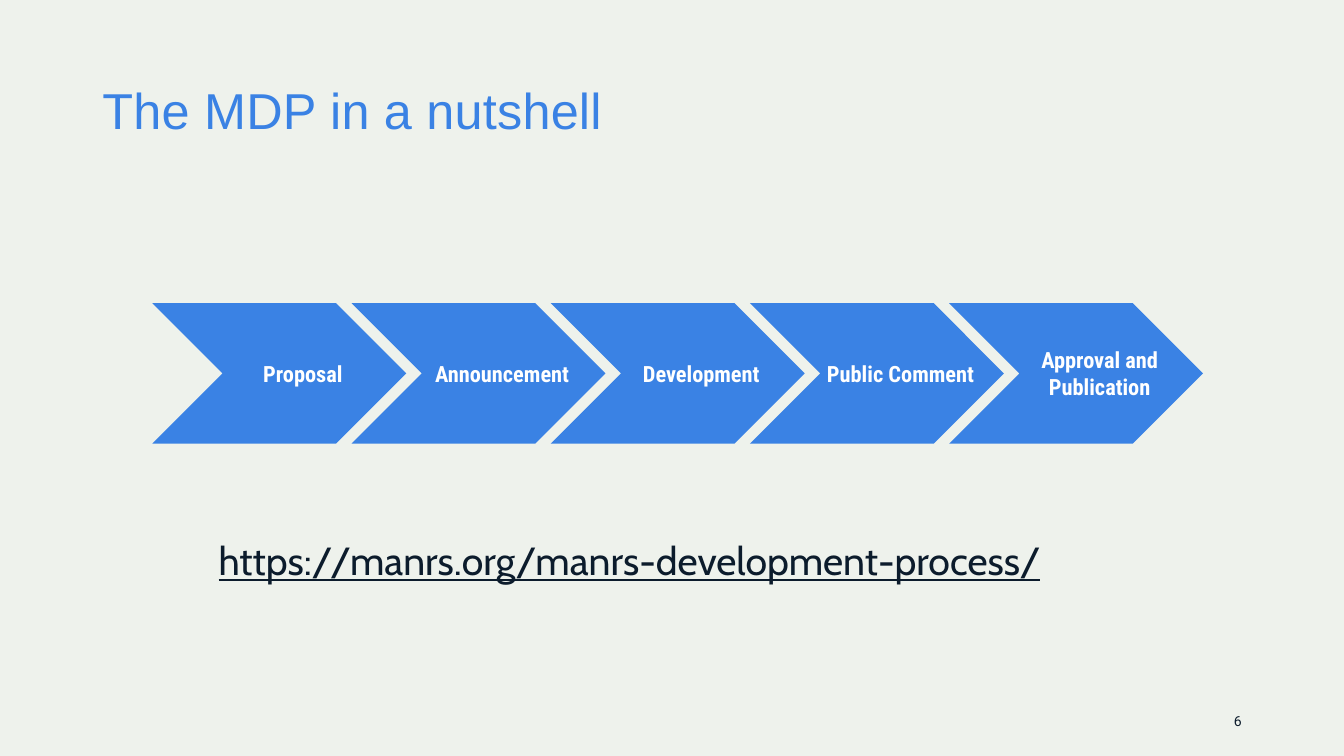
from pptx import Presentation
from pptx.dml.color import RGBColor
from pptx.enum.shapes import MSO_SHAPE as Shape
from pptx.enum.text import MSO_ANCHOR as Anchor, PP_ALIGN as Align
from pptx.util import Cm, Pt

BACKGROUND, BLUE, NAVY, WHITE = "EEF2EC", "3A82E4", "0C1C2C", "FFFFFF"
STEPS = ["Proposal", "Announcement", "Development", "Public Comment",
         "Approval and\nPublication"]
STEP_LEFT, STEP_PITCH = 3.84, 5.02


def paint(fill, color):
    fill.solid()
    fill.fore_color.rgb = RGBColor.from_string(color)


def write(shape, text, font, size, color, align=Align.LEFT, bold=False, underline=False):
    """Put text in a shape, one paragraph a line, vertically centred."""
    frame = shape.text_frame
    frame.text = text
    frame.vertical_anchor = Anchor.MIDDLE
    for para in frame.paragraphs:
        para.alignment = align
        for span in para.runs:
            span.font.name = font
            span.font.size = Pt(size)
            span.font.bold = bold
            span.font.underline = underline
            span.font.color.rgb = RGBColor.from_string(color)


def add_text(page, left, top, width, height, text, font, size, color, **style):
    box = page.shapes.add_textbox(Cm(left), Cm(top), Cm(width), Cm(height))
    box.text_frame.word_wrap = True
    write(box, text, font, size, color, **style)
    return box


def add_step(page, left, label):
    step = page.shapes.add_shape(Shape.CHEVRON, Cm(left), Cm(7.64), Cm(6.4), Cm(3.54))
    step.shadow.inherit = False
    paint(step.fill, BLUE)
    step.line.fill.background()
    frame = step.text_frame
    frame.word_wrap = False
    frame.margin_left, frame.margin_right = Cm(1.19), Cm(0)
    write(step, label, "Roboto Condensed", 16, WHITE, align=Align.CENTER, bold=True)


def main():
    deck = Presentation()
    deck.slide_width, deck.slide_height = Cm(33.87), Cm(19.05)
    page = deck.slides.add_slide(deck.slide_layouts[6])
    paint(page.background.fill, BACKGROUND)

    title = add_text(page, 2.33, 1.02, 29.21, 3.68, "The MDP in a nutshell",
                     "Arial", 36, BLUE)
    title_para = title.text_frame.paragraphs[0]
    title_para.line_spacing = 0.9
    title_para.runs[0].font._element.set("spc", "20")

    add_text(page, 23.92, 17.65, 7.62, 1.02, "6", "Roboto", 10, NAVY, align=Align.RIGHT)
    for index, label in enumerate(STEPS):
        add_step(page, STEP_LEFT + index * STEP_PITCH, label)
    add_text(page, 5.26, 13.39, 21.44, 1.45,
             "https://manrs.org/manrs-development-process/", "Cabin", 28, NAVY,
             underline=True)
    deck.save("out.pptx")


if __name__ == "__main__":
    main()
